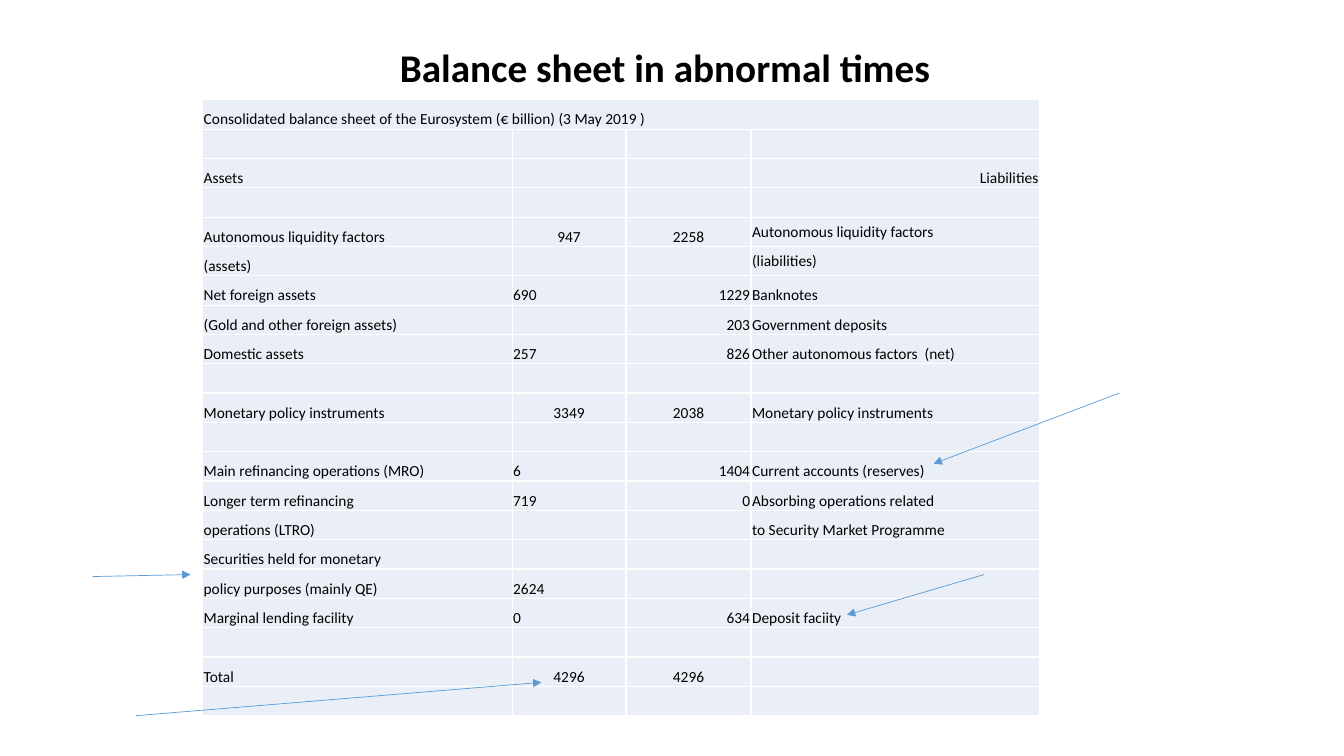
from typing import NamedTuple

from lxml.etree import SubElement
from pptx import Presentation
from pptx.dml.color import RGBColor
from pptx.enum.dml import MSO_THEME_COLOR
from pptx.enum.shapes import MSO_CONNECTOR
from pptx.enum.text import MSO_ANCHOR, MSO_AUTO_SIZE, PP_ALIGN
from pptx.oxml.ns import qn
from pptx.slide import Slide
from pptx.table import Table, _Cell as Cell
from pptx.text.text import _Paragraph as Paragraph
from pptx.util import Inches, Pt

FONT = "Calibri"
BLACK, CELL_FILL, ARROW_BLUE = "000000", "EAEFF7", "5B9BD5"
CELL_SIZE = 11
COLUMN_WIDTHS = (3.07, 1.13, 1.24, 2.86)
TABLE_LEFT, TABLE_TOP, TABLE_HEIGHT = 2.01, 0.99, 6.11


class Entry(NamedTuple):
    asset: str = ""
    asset_value: str = ""
    liability_value: str = ""
    liability: str = ""
    is_subtotal: bool = False
    liability_align: PP_ALIGN = PP_ALIGN.LEFT
    liability_anchor: MSO_ANCHOR = MSO_ANCHOR.BOTTOM


class Arrow(NamedTuple):
    start: tuple[float, float]
    end: tuple[float, float]


ENTRIES = (
    Entry("Consolidated balance sheet of the Eurosystem (€ billion) (3 May 2019 )"),
    Entry(),
    Entry("Assets", liability="Liabilities", liability_align=PP_ALIGN.RIGHT),
    Entry(),
    Entry("Autonomous liquidity factors", "947", "2258", "Autonomous liquidity factors",
          is_subtotal=True, liability_anchor=MSO_ANCHOR.MIDDLE),
    Entry("(assets)", liability="(liabilities)", liability_anchor=MSO_ANCHOR.MIDDLE),
    Entry("Net foreign assets", "690", "1229", "Banknotes"),
    Entry("(Gold and other foreign assets)", "", "203", "Government deposits"),
    Entry("Domestic assets", "257", "826", "Other autonomous factors  (net)"),
    Entry(),
    Entry("Monetary policy instruments", "3349", "2038", "Monetary policy instruments",
          is_subtotal=True),
    Entry(),
    Entry("Main refinancing operations (MRO)", "6", "1404", "Current accounts (reserves)"),
    Entry("Longer term refinancing", "719", "0", "Absorbing operations related"),
    Entry("operations (LTRO)", liability="to Security Market Programme"),
    Entry("Securities held for monetary"),
    Entry("policy purposes (mainly QE)", "2624"),
    Entry("Marginal lending facility", "0", "634", "Deposit faciity"),
    Entry(),
    Entry("Total", "4296", "4296", is_subtotal=True),
    Entry(),
)

ARROWS = (
    Arrow((1.35, 7.1), (5.37, 6.77)),
    Arrow((0.92, 5.72), (1.89, 5.7)),
    Arrow((11.1, 3.9), (9.26, 4.6)),
    Arrow((9.76, 5.7), (8.4, 6.1)),
)


def colour(value: str) -> RGBColor:
    return RGBColor.from_string(value)


def add_run(paragraph: Paragraph, text: str, size: float, bold: bool = False) -> None:
    run = paragraph.add_run()
    run.text = text
    run.font.name = FONT
    run.font.size = Pt(size)
    run.font.bold = bold
    run.font.color.rgb = colour(BLACK)


def add_title(slide: Slide, text: str) -> None:
    title = slide.shapes.title
    title.left, title.top = Inches(0.92), Inches(0.4)
    title.width, title.height = Inches(11.35), Inches(0.59)
    frame = title.text_frame
    frame.auto_size = MSO_AUTO_SIZE.NONE
    frame.vertical_anchor = MSO_ANCHOR.MIDDLE
    paragraph = frame.paragraphs[0]
    paragraph.alignment = PP_ALIGN.CENTER
    paragraph.line_spacing = 0.9
    add_run(paragraph, text, 28, bold=True)


def fill_cell(cell: Cell, text: str, align: PP_ALIGN, anchor: MSO_ANCHOR) -> None:
    cell.fill.solid()
    cell.fill.fore_color.rgb = colour(CELL_FILL)
    cell.margin_left = cell.margin_right = cell.margin_top = Inches(0.01)
    cell.margin_bottom = 0
    cell.vertical_anchor = anchor
    paragraph = cell.text_frame.paragraphs[0]
    paragraph.alignment = align
    if text:
        add_run(paragraph, text, CELL_SIZE)
    else:
        SubElement(paragraph._p, qn("a:endParaRPr"), sz=str(CELL_SIZE * 100))


def fill_row(table: Table, row: int, entry: Entry) -> None:
    center = PP_ALIGN.CENTER if entry.is_subtotal else None
    texts = (entry.asset, entry.asset_value, entry.liability_value, entry.liability)
    aligns = (PP_ALIGN.LEFT, center or PP_ALIGN.LEFT, center or PP_ALIGN.RIGHT,
              entry.liability_align)
    anchors = (MSO_ANCHOR.BOTTOM,) * 3 + (entry.liability_anchor,)
    for column, (text, align, anchor) in enumerate(zip(texts, aligns, anchors)):
        fill_cell(table.cell(row, column), text, align, anchor)


def add_balance_sheet(slide: Slide) -> None:
    table = slide.shapes.add_table(
        len(ENTRIES), len(COLUMN_WIDTHS), Inches(TABLE_LEFT), Inches(TABLE_TOP),
        Inches(sum(COLUMN_WIDTHS)), Inches(TABLE_HEIGHT)).table
    table.first_row = table.horz_banding = False
    for column, width in zip(table.columns, COLUMN_WIDTHS):
        column.width = Inches(width)
    for row, entry in enumerate(ENTRIES):
        fill_row(table, row, entry)
    table.cell(0, 0).merge(table.cell(0, len(COLUMN_WIDTHS) - 1))


def add_arrow(slide: Slide, arrow: Arrow) -> None:
    points = [Inches(length) for length in arrow.start + arrow.end]
    connector = slide.shapes.add_connector(MSO_CONNECTOR.STRAIGHT, *points)
    connector.line.color.rgb = colour(ARROW_BLUE)
    connector.line.width = Pt(0.5)
    SubElement(connector.line._get_or_add_ln(), qn("a:tailEnd"), type="triangle")
    SubElement(connector._element.spPr, qn("a:effectLst"))


def main() -> None:
    presentation = Presentation()
    presentation.slide_width, presentation.slide_height = Inches(13.33), Inches(7.5)
    title_only = presentation.slide_layouts[5]
    slide = presentation.slides.add_slide(title_only)
    background = slide.background.fill
    background.solid()
    background.fore_color.theme_color = MSO_THEME_COLOR.BACKGROUND_1
    add_title(slide, "Balance sheet in abnormal times")
    add_balance_sheet(slide)
    for arrow in ARROWS:
        add_arrow(slide, arrow)
    presentation.save("out.pptx")


if __name__ == "__main__":
    main()
